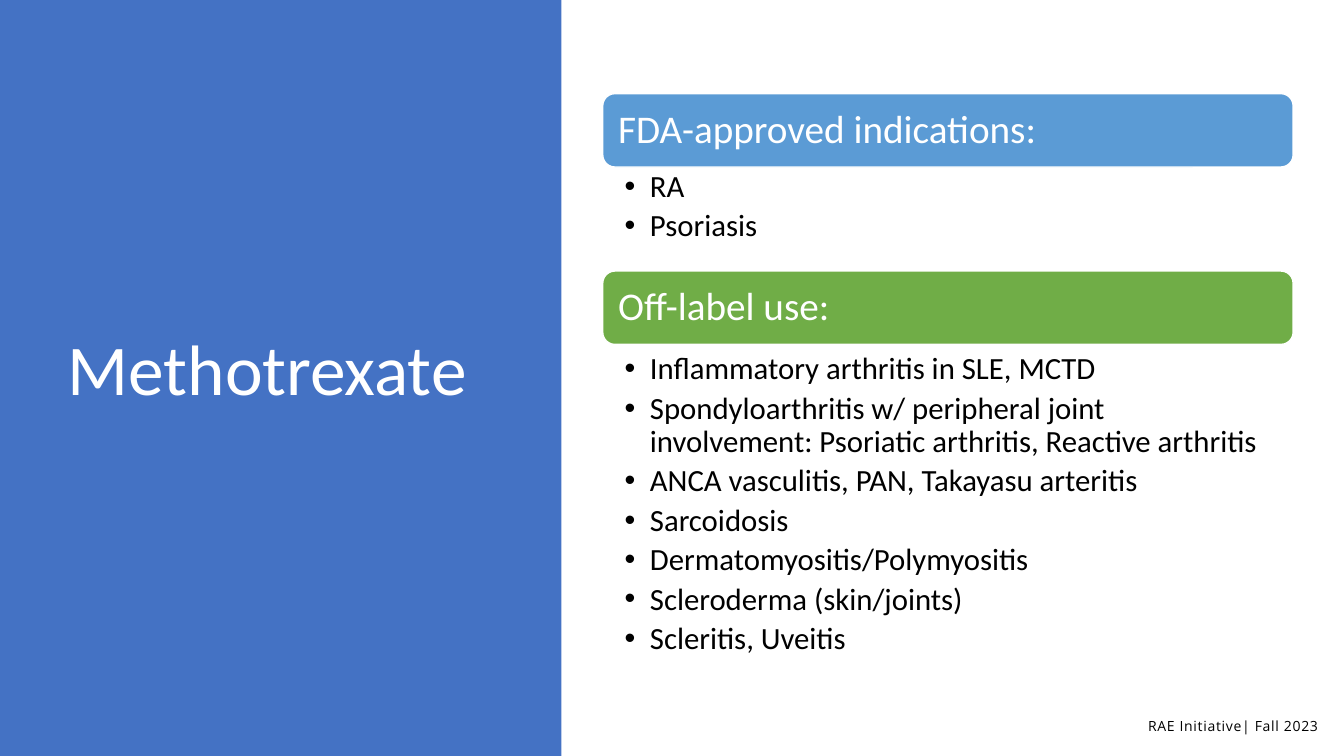
from pptx import Presentation
from pptx.dml.color import RGBColor
from pptx.enum.shapes import MSO_SHAPE
from pptx.enum.text import MSO_ANCHOR, PP_ALIGN
from pptx.oxml.ns import qn
from pptx.util import Cm, Pt
from lxml.etree import SubElement

WHITE = RGBColor(0xFF, 0xFF, 0xFF)
BLACK = RGBColor(0, 0, 0)
PANEL_BLUE = RGBColor(0x44, 0x72, 0xC4)
APPROVED_BLUE = RGBColor(0x5B, 0x9B, 0xD5)
OFF_LABEL_GREEN = RGBColor(0x70, 0xAD, 0x47)

SECTIONS = [
    # heading, colour, top, gap below the heading, list height, items
    ("FDA-approved indications:", APPROVED_BLUE, Cm(2.36), Cm(0), Cm(2.08),
     ["RA", "Psoriasis"]),
    ("Off-label use:", OFF_LABEL_GREEN, Cm(6.83), Cm(0.12), Cm(8.2),
     ["Inflammatory arthritis in SLE, MCTD",
      "Spondyloarthritis w/ peripheral joint involvement: "
      "Psoriatic arthritis, Reactive arthritis",
      "ANCA vasculitis, PAN, Takayasu arteritis",
      "Sarcoidosis",
      "Dermatomyositis/Polymyositis",
      "Scleroderma (skin/joints)",
      "Scleritis, Uveitis"]),
]


def add_span(para, text, size, colour, font="Calibri"):
    span = para.add_run()
    span.text = text
    span.font.name = font
    span.font.size = Pt(size)
    span.font.color.rgb = colour
    return span


def set_margins(frame, side, edge):
    frame.word_wrap = True
    frame.margin_left = frame.margin_right = side
    frame.margin_top = frame.margin_bottom = edge


def add_block(page, kind, left, top, width, height, fill):
    block = page.shapes.add_shape(kind, left, top, width, height)
    block.shadow.inherit = False
    block.fill.solid()
    block.fill.fore_color.rgb = fill
    return block


def add_bullet(para):
    properties = para._p.get_or_add_pPr()
    properties.set("marL", str(Cm(0.64)))
    properties.set("indent", str(-Cm(0.64)))
    SubElement(properties, qn("a:buFont")).set("typeface", "Arial")
    SubElement(properties, qn("a:buChar")).set("char", "•")


def add_title_panel(page, left, top, width, height):
    panel = add_block(page, MSO_SHAPE.RECTANGLE, left, top, width, height, PANEL_BLUE)
    panel.line.fill.background()

    # The title lies in front of its panel
    title = page.shapes.title
    title.element.addprevious(panel.element)
    title.left, title.top = left + Cm(1.45), top + Cm(1.73)
    title.width, title.height = Cm(10.57), Cm(15.29)
    frame = title.text_frame
    frame.word_wrap = True
    frame.margin_right = 0  # room for the long word on one line
    frame.vertical_anchor = MSO_ANCHOR.MIDDLE
    para = frame.paragraphs[0]
    para.alignment = PP_ALIGN.LEFT
    para.line_spacing = 0.9
    add_span(para, "Methotrexate", 51, WHITE)


def add_section(page, left, top, width, heading, colour, gap, list_height, items):
    # Heading bar
    bar_height = Cm(1.85)
    bar = add_block(page, MSO_SHAPE.ROUNDED_RECTANGLE, left, top, width, bar_height, colour)
    bar.line.color.rgb = WHITE
    bar.line.width = Pt(1)
    frame = bar.text_frame
    set_margins(frame, Cm(0.3), Cm(0.3))
    frame.vertical_anchor = MSO_ANCHOR.MIDDLE
    para = frame.paragraphs[0]
    para.alignment = PP_ALIGN.LEFT
    para.line_spacing = 0.9
    add_span(para, heading, 28, WHITE)

    # Bulleted list
    box = page.shapes.add_textbox(left, top + bar_height + gap, width, list_height)
    frame = box.text_frame
    set_margins(frame, Cm(0.55), Cm(0.1))
    for index, item in enumerate(items):
        para = frame.add_paragraph() if index else frame.paragraphs[0]
        para.level = 1
        para.line_spacing = 0.9
        para.space_after = Pt(4.4)
        add_bullet(para)
        add_span(para, item, 22, BLACK)


def add_footer(page, left, top, width, height):
    box = page.shapes.add_textbox(left, top, width, height)
    set_margins(box.text_frame, 0, 0)
    para = box.text_frame.paragraphs[0]
    para.alignment = PP_ALIGN.RIGHT
    para.line_spacing = Pt(12)
    span = add_span(para, "RAE Initiative| Fall 2023", 10, BLACK, "Open Sans")
    span._r.get_or_add_rPr().set("spc", "50")


def main():
    deck = Presentation()
    deck.slide_width, deck.slide_height = Cm(33.87), Cm(19.05)
    page = deck.slides.add_slide(deck.slide_layouts[5])

    add_title_panel(page, 0, 0, Cm(14.15), deck.slide_height)
    for heading, colour, top, gap, list_height, items in SECTIONS:
        add_section(page, Cm(15.19), top, Cm(17.4), heading, colour, gap, list_height, items)
    add_footer(page, Cm(26.9), Cm(18.08), Cm(6.32), Cm(0.43))

    deck.save("out.pptx")


if __name__ == "__main__":
    main()
